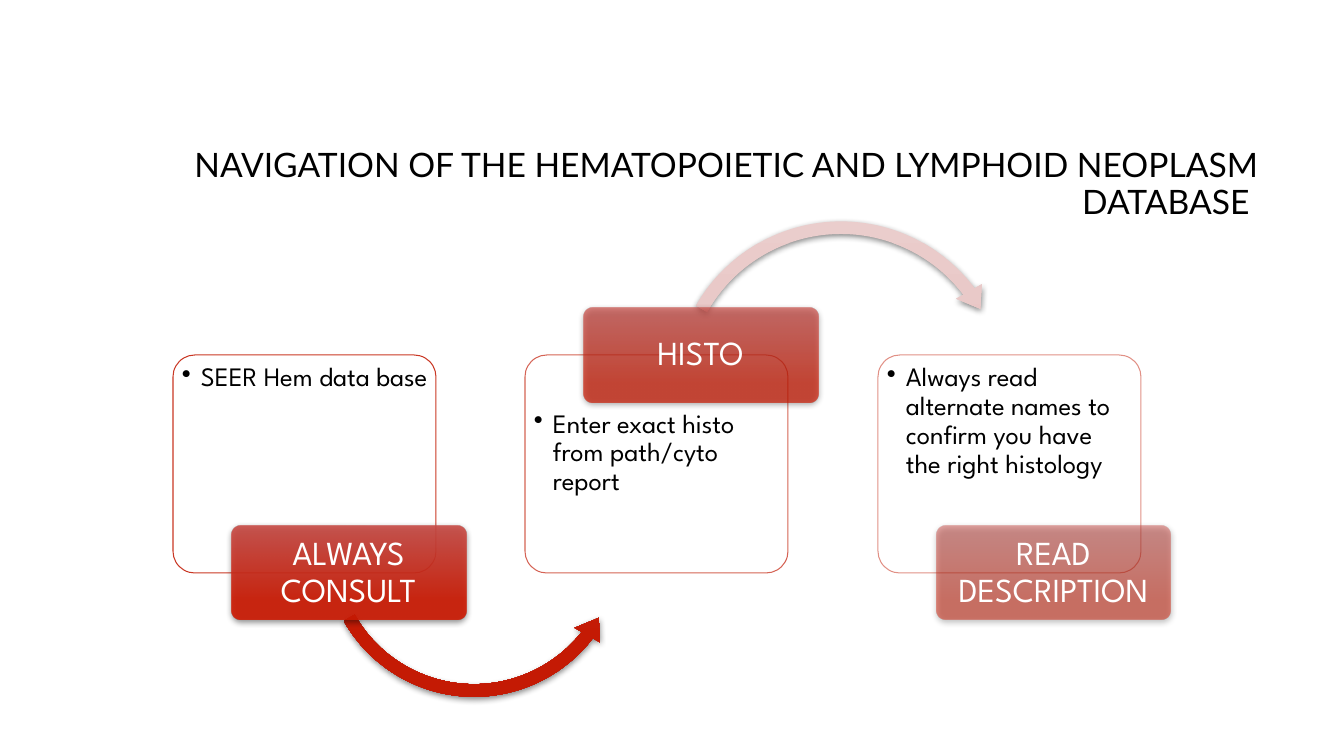
from dataclasses import dataclass

from lxml.etree import SubElement
from pptx import Presentation
from pptx.dml.color import RGBColor
from pptx.enum.shapes import MSO_SHAPE as Preset
from pptx.enum.text import MSO_ANCHOR as Anchor, PP_ALIGN as Align
from pptx.oxml.ns import qn
from pptx.util import Pt

PX = 914400 / 100.8


@dataclass(frozen=True)
class Theme:
    black: str = "000000"
    white: str = "FFFFFF"
    outline: str = "C4220D"
    label: tuple = ("C94D48", "CD1B04")
    title_font: str = "Lato"
    body_font: str = "League Spartan"
    large: int = 24
    body: int = 19


theme = Theme()

presentation = Presentation()
presentation.slide_width = round(1344 * PX)
presentation.slide_height = round(756 * PX)
slide = presentation.slides.add_slide(presentation.slide_layouts[6])


def add_text(box, text, font, size, color, align, anchor, insets):
    """Add a one-paragraph text box; box and insets are in px."""
    shape = slide.shapes.add_textbox(*(round(v * PX) for v in box))
    frame = shape.text_frame
    frame.word_wrap = True
    frame.vertical_anchor = anchor
    frame.margin_left = frame.margin_right = round(insets[0] * PX)
    frame.margin_top = frame.margin_bottom = round(insets[1] * PX)
    paragraph = frame.paragraphs[0]
    paragraph.alignment = align
    paragraph.line_spacing = 0.9
    run = paragraph.add_run()
    run.text = text
    run.font.name = font
    run.font.size = Pt(size)
    run.font.color.rgb = RGBColor.from_string(color)
    return paragraph


def add_panel(preset, box, adjustments, colors, opacity, outline_opacity=None):
    """Add a shape: one color gives an outlined card, two a shadowed gradient."""
    shape = slide.shapes.add_shape(preset, *(round(v * PX) for v in box))
    shape.shadow.inherit = False
    for index, value in enumerate(adjustments):
        shape.adjustments[index] = value
    properties = shape._element.spPr
    if len(colors) == 1:
        shape.fill.solid()
        shape.fill.fore_color.rgb = RGBColor.from_string(colors[0])
        shape.line.color.rgb = RGBColor.from_string(theme.outline)
        shape.line.width = Pt(0.75)
    else:
        shape.fill.gradient()
        shape.fill.gradient_angle = 270
        for stop, color, position in zip(shape.fill.gradient_stops, colors, (0, 0.78)):
            stop.color.rgb = RGBColor.from_string(color)
            stop.position = position
        shape.line.fill.background()
        shadow = SubElement(properties.find(qn("a:effectLst")), qn("a:outerShdw"),
                            blurRad=str(Pt(4.5)), dist=str(Pt(1.5)),
                            dir="5400000", rotWithShape="0")
        shadow_color = SubElement(shadow, qn("a:srgbClr"), val=theme.black)
        SubElement(shadow_color, qn("a:alpha"), val="48000")
    for part, percent in (("a:solidFill", opacity), ("a:gradFill", opacity),
                          ("a:ln", outline_opacity)):
        element = properties.find(qn(part))
        if element is not None and percent is not None:
            for color in element.iter(qn("a:srgbClr")):
                SubElement(color, qn("a:alpha"), val=str(percent * 1000))


add_text((33, 143, 1235, 84),
         "NAVIGATION OF THE HEMATOPOIETIC AND LYMPHOID NEOPLASM DATABASE ",
         theme.title_font, theme.large, theme.black, Align.RIGHT, Anchor.MIDDLE, (10, 5))

# Heading, detail, opacity, label top, detail top, arrow to the next step
steps = [
    ("ALWAYS CONSULT", "SEER Hem data base", 90, 526, 360,
     (Preset.LEFT_CIRCULAR_ARROW, (316, 389, 316, 316),
      (0.04, 4.966, 22.722, 90.245, 0.046), ("C24B47", "C41A04"))),
    ("HISTO", "Enter exact histo from path/cyto report", 70, 308, 406,
     (Preset.CIRCULAR_ARROW, (666, 213, 350, 350),
      (0.036, 4.448, 193.797, 125.755, 0.042), ("EACDCC", "E6BCBB"))),
    ("READ DESCRIPTION",
     "Always read alternate names to confirm you have the right histology",
     50, 526, 360, None),
]

for column, (heading, detail, opacity, label_top, detail_top, arrow) in enumerate(steps):
    left = 173 + column * 705 // 2
    add_panel(Preset.ROUNDED_RECTANGLE, (left, 355, 263, 218), (0.1,),
              (theme.white,), 90, opacity)
    paragraph = add_text((left + 5, detail_top, 254, 161), detail, theme.body_font,
                         theme.body, theme.black, Align.LEFT, Anchor.TOP, (4, 4))
    paragraph_properties = paragraph._p.get_or_add_pPr()
    paragraph_properties.set("marL", str(round(19 * PX)))
    paragraph_properties.set("indent", str(round(-19 * PX)))
    SubElement(paragraph_properties, qn("a:buChar"), char="•")
    if arrow:
        add_panel(*arrow, 100)
    add_panel(Preset.ROUNDED_RECTANGLE, (left + 59, label_top, 234, 94), (0.1,),
              theme.label, opacity)
    add_text((left + 61, label_top + 3, 229, 88), heading, theme.body_font,
             theme.large, theme.white, Align.CENTER, Anchor.MIDDLE, (5, 3))

presentation.save("out.pptx")
